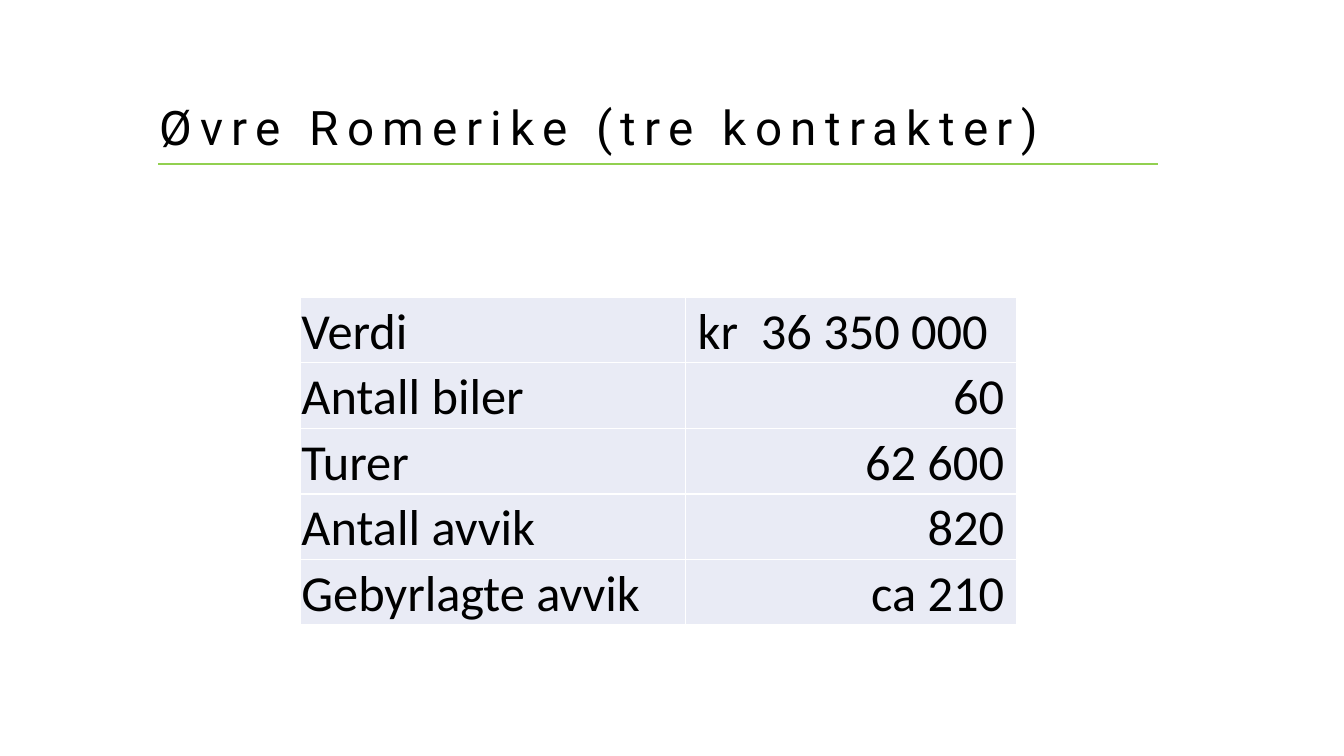
from pptx import Presentation
from pptx.dml.color import RGBColor
from pptx.enum.shapes import MSO_CONNECTOR
from pptx.enum.text import MSO_ANCHOR, MSO_AUTO_SIZE, PP_ALIGN
from pptx.oxml.ns import qn
from pptx.util import Pt
from lxml.etree import SubElement

SCALE = 9144  # EMU per px, 100 px to the inch
ROWS = [
    ("Verdi", "kr  36 350 000"),
    ("Antall biler", "60"),
    ("Turer", "62 600"),
    ("Antall avvik", "820"),
    ("Gebyrlagte avvik", "ca 210"),
]
WIDTHS = (382, 328)
HEIGHT = 65


def px(num):
    return num * SCALE


def color(code):
    return RGBColor.from_string(code)


def add_run(para, text, font, size):
    run = para.add_run()
    run.text = text
    run.font.name = font
    run.font.size = Pt(size)
    run.font.color.rgb = color("000000")
    return run


def add_title(slide, text):
    title = slide.shapes.title
    title.left, title.top = px(148), px(97)
    title.width, title.height = px(1061), px(64)
    frame = title.text_frame
    frame.word_wrap = True
    frame.auto_size = MSO_AUTO_SIZE.NONE
    frame.vertical_anchor = MSO_ANCHOR.MIDDLE
    para = frame.paragraphs[0]
    para.alignment = PP_ALIGN.LEFT
    para.line_spacing = 0.9
    run = add_run(para, text, "Roboto", 34)
    run.font._element.set("spc", "600")  # letter spacing of 6 pt


def add_rule(slide, left, right, top):
    rule = slide.shapes.add_connector(
        MSO_CONNECTOR.STRAIGHT, px(left), px(top), px(right), px(top))
    rule.line.color.rgb = color("92D050")
    rule.line.width = Pt(1.5)
    SubElement(rule._element.spPr, qn("a:effectLst"))


def add_border(cell, code):
    props = cell._tc.get_or_add_tcPr()
    for side in ("L", "R", "T", "B"):
        line = SubElement(props, qn(f"a:ln{side}"), w=str(Pt(1)))
        fill = SubElement(line, qn("a:solidFill"))
        SubElement(fill, qn("a:srgbClr"), val=code)


def fill_cell(cell, text, align, pad):
    add_border(cell, "FFFFFF")
    cell.fill.solid()
    cell.fill.fore_color.rgb = color("E9EBF5")
    cell.vertical_anchor = MSO_ANCHOR.BOTTOM
    cell.margin_left = cell.margin_right = px(pad)
    cell.margin_top, cell.margin_bottom = px(1), 0
    para = cell.text_frame.paragraphs[0]
    para.alignment = align
    add_run(para, text, "Calibri", 36)


def add_grid(slide, left, top):
    grid = slide.shapes.add_table(
        len(ROWS), len(WIDTHS), px(left), px(top),
        px(sum(WIDTHS)), px(HEIGHT * len(ROWS))).table
    grid.first_row = grid.horz_banding = False
    for col, width in zip(grid.columns, WIDTHS):
        col.width = px(width)
    for i, (label, value) in enumerate(ROWS):
        grid.rows[i].height = px(HEIGHT)
        # The amount in the top row sits left, the counts sit right
        align = PP_ALIGN.RIGHT if i else PP_ALIGN.LEFT
        fill_cell(grid.cell(i, 0), label, PP_ALIGN.LEFT, 1)
        fill_cell(grid.cell(i, 1), value, align, 12)


def main():
    deck = Presentation()
    deck.slide_width, deck.slide_height = px(1333), px(750)
    slide = deck.slides.add_slide(deck.slide_layouts[5])
    # Heading
    add_rule(slide, 157, 1149, 163)
    add_title(slide, "Øvre Romerike (tre kontrakter)")
    # Key figures
    add_grid(slide, 298, 295)
    deck.save("out.pptx")


if __name__ == "__main__":
    main()
